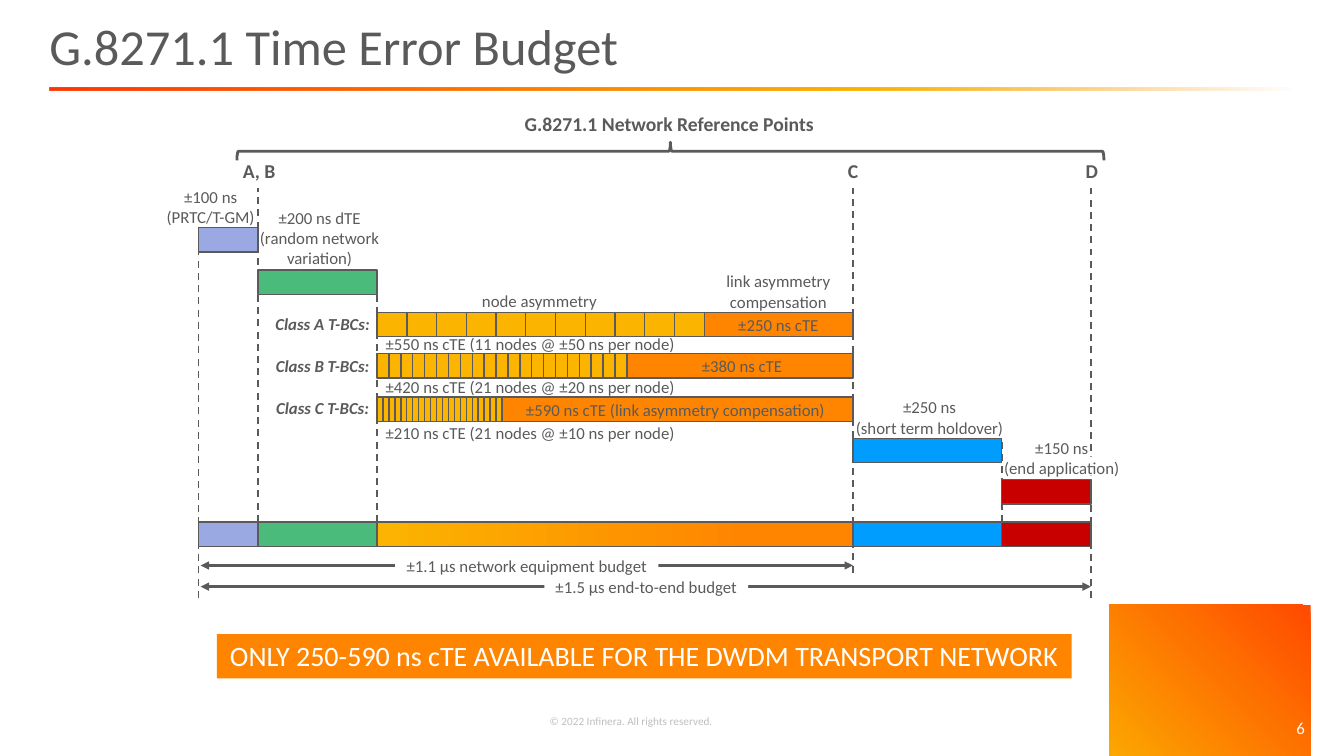
import pptx
import pptx.dml.color
import pptx.enum.dml
import pptx.enum.shapes
import pptx.enum.text
import pptx.oxml
import pptx.oxml.ns
import pptx.util

Inches = pptx.util.Inches
RGBColor = pptx.dml.color.RGBColor
SHAPE = pptx.enum.shapes.MSO_SHAPE
GREY, WHITE, PALE = RGBColor(0x5A, 0x5A, 0x5A), RGBColor(255, 255, 255), RGBColor(0xBF, 0xBF, 0xBF)
AMBER, ORANGE = RGBColor(0xFB, 0xB4, 0x00), RGBColor(0xFF, 0x85, 0x00)
FLAME, SCARLET = RGBColor(0xFF, 0x4A, 0x00), RGBColor(0xFF, 0x35, 0x01)
TANGERINE = RGBColor(0xFB, 0x94, 0x14)
LILAC, GREEN = RGBColor(0x9B, 0xA9, 0xE3), RGBColor(0x4B, 0xBB, 0x7C)
BLUE, RED = RGBColor(0x00, 0x9D, 0xFF), RGBColor(0xC9, 0x00, 0x00)

LEFT, PER_NS, BAR_H = 1.97, 0.0059, 0.24
NETWORK_START, NETWORK_NS = 300, 800
BUDGET = [(0, 100, LILAC, 2.26), (100, 200, GREEN, 2.68),
          (1100, 250, BLUE, 4.35), (1350, 150, RED, 4.76)]
CLASSES = [("A", 11, 50, 3.1), ("B", 21, 20, 3.51), ("C", 21, 10, 3.94)]
NETWORK_FILL = [(0, AMBER, 100), (78, ORANGE, 100), (100, ORANGE, 100)]
RULE_FILL = [(0, SCARLET, 100), (66, AMBER, 100), (100, TANGERINE, 0)]
CORNER_FILL = [(0, FLAME, 100), (100, AMBER, 100)]
GUIDES = [(1500, 5.93, 1.87), (100, 5.42, 1.87), (0, 5.93, 2.26),
          (300, 5.42, 2.68), (1350, 5.42, 4.37), (1100, 5.68, 1.87)]
BOLD = {"size": 14, "bold": True}
CLASS_STYLE = {"bold": True, "italic": True}
LABELS = [
    ("A, B", 2.57, 1.53, BOLD), ("C", 8.46, 1.53, BOLD), ("D", 10.83, 1.53, BOLD),
    ("G.8271.1 Network Reference Points", 6.64, 1.06, BOLD),
    ("±100 ns\n(PRTC/T-GM)", 2.09, 1.8, {}),
    ("±200 ns dTE\n(random network\nvariation)", 3.17, 2.01, {}),
    ("node asymmetry", 5.35, 2.84, {}),
    ("link asymmetry\ncompensation", 7.72, 2.64, {}),
    ("Class A T-BCs:", 3.2, 3.06, CLASS_STYLE),
    ("Class B T-BCs:", 3.2, 3.48, CLASS_STYLE),
    ("Class C T-BCs:", 3.2, 3.9, CLASS_STYLE),
    ("±550 ns cTE (11 nodes @ ±50 ns per node)", 5.26, 3.26, {}),
    ("±420 ns cTE (21 nodes @ ±20 ns per node)", 5.26, 3.69, {}),
    ("±210 ns cTE (21 nodes @ ±10 ns per node)", 5.26, 4.14, {}),
    ("±250 ns cTE", 7.72, 3.07, {}),
    ("±380 ns cTE", 7.36, 3.48, {}),
    ("±590 ns cTE (link asymmetry compensation)", 6.7, 3.92, {}),
    ("±250 ns\n(short term holdover)", 9.22, 3.89, {}),
    ("±150 ns\n(end application)", 10.53, 4.29, {}),
    ("6", 12.9, 7.07, {"color": WHITE}),
]


def x_at(ns):
    """Return the horizontal position of a time error in inches."""
    return LEFT + ns * PER_NS


class Deck:
    """Holds the style and the current slide and draws each kind of element."""

    font = {"name": "Calibri", "size": 12, "color": GREY}

    def __init__(self, prs):
        """Add a title-only slide."""
        self.s = prs.slides.add_slide(prs.slide_layouts[5])

    def set_text(self, sp, text, align="CENTER", anchor="TOP", wrap=False, **style):
        """Put formatted text in a shape."""
        tf = sp.text_frame
        frame = {"text": text, "word_wrap": wrap,
                 "auto_size": pptx.enum.text.MSO_AUTO_SIZE.NONE,
                 "vertical_anchor": getattr(pptx.enum.text.MSO_ANCHOR, anchor),
                 "margin_left": Inches(0.1), "margin_right": Inches(0.1),
                 "margin_top": Inches(0.05), "margin_bottom": Inches(0.05)}
        for key, value in frame.items():
            setattr(tf, key, value)
        values = {**self.font, **style}
        color = values.pop("color")
        values["size"] = pptx.util.Pt(values["size"])
        for p in tf.paragraphs:
            p.alignment = getattr(pptx.enum.text.PP_ALIGN, align)
            for r in p.runs:
                for key, value in values.items():
                    setattr(r.font, key, value)
                r.font.color.rgb = color

    def title(self, text):
        """Move and format the title placeholder."""
        sp = self.s.shapes.title
        sp.left, sp.top, sp.width, sp.height = map(Inches, (0.49, 0.01, 12.22, 0.89))
        self.set_text(sp, text, "LEFT", "MIDDLE", True, size=36)
        sp.text_frame.margin_left = 0

    def label(self, text, center, top, style):
        """Add a text box centred on a horizontal position."""
        size = style.get("size", self.font["size"])
        rows = text.split("\n")
        height = 0.1 + len(rows) * size * 1.22 / 72
        width = 0.2 + max(map(len, rows)) * size * 0.0061
        sp = self.s.shapes.add_textbox(*map(Inches, (center - width / 2, top, width, height)))
        self.set_text(sp, text, **style)

    def paint(self, sp, fill, line=None, angle=0):
        """Set a solid or gradient fill and the outline."""
        sp.shadow.inherit = False
        if fill is None:
            sp.fill.background()
        elif isinstance(fill, list):
            sp.fill.gradient()
            sp.fill.gradient_angle = angle
            stops = sp._element.spPr.find(".//" + pptx.oxml.ns.qn("a:gsLst"))
            for stop in list(stops):
                stops.remove(stop)
            for pos, color, alpha in fill:
                stops.append(pptx.oxml.parse_xml(
                    f'<a:gs {pptx.oxml.ns.nsdecls("a")} pos="{pos * 1000}"><a:srgbClr val="{color}">'
                    f'<a:alpha val="{alpha * 1000}"/></a:srgbClr></a:gs>'))
        else:
            sp.fill.solid()
            sp.fill.fore_color.rgb = fill
        if line:
            sp.line.color.rgb = GREY
            sp.line.width = pptx.util.Pt(line)
        else:
            sp.line.fill.background()

    def box(self, at, fill, line=None, kind=SHAPE.RECTANGLE):
        """Add a preset shape."""
        sp = self.s.shapes.add_shape(kind, *map(Inches, at))
        self.paint(sp, fill, line)
        return sp

    def bar(self, start, length, top, fill):
        """Add a budget bar measured in nanoseconds."""
        self.box((x_at(start), top, length * PER_NS, BAR_H), fill, 1)

    def line(self, start, end, width, dashed=False, arrows=False):
        """Add a straight line, dashed or with an arrowhead at each end."""
        sp = self.s.shapes.add_connector(
            pptx.enum.shapes.MSO_CONNECTOR.STRAIGHT, *map(Inches, start + end))
        sp.line.color.rgb = GREY
        sp.line.width = pptx.util.Pt(width)
        if dashed:
            sp.line.dash_style = pptx.enum.dml.MSO_LINE.DASH
        ns = pptx.oxml.ns.nsdecls("a")
        if arrows:
            for end_name in ("headEnd", "tailEnd"):
                sp.line._get_or_add_ln().append(
                    pptx.oxml.parse_xml(f'<a:{end_name} {ns} type="triangle"/>'))
        sp._element.spPr.append(pptx.oxml.parse_xml(f"<a:effectLst {ns}/>"))

    def corner(self):
        """Add the curved corner at the bottom right."""
        curve = [(13.33, 6.32), (12.92, 6.98), (12.37, 7.39), (10.88, 7.5)]
        points = []
        for t in (i / 40 for i in range(41)):
            weights = ((1 - t) ** 3, 3 * t * (1 - t) ** 2, 3 * t * t * (1 - t), t ** 3)
            points.append(tuple(sum(w * c[k] for w, c in zip(weights, curve)) for k in (0, 1)))
        fb = self.s.shapes.build_freeform(13.33, 7.5, scale=Inches(1))
        fb.add_line_segments(points)
        self.paint(fb.convert_to_shape(), CORNER_FILL, angle=225)


def main():
    """Build the slide and save it."""
    prs = pptx.Presentation()
    prs.slide_width, prs.slide_height = Inches(13.33), Inches(7.5)
    deck = Deck(prs)
    deck.title("G.8271.1 Time Error Budget")
    deck.corner()
    deck.box((0.49, 0.87, 12.35, 0.03), RULE_FILL)
    for index, (ns, bottom, top) in enumerate(GUIDES):
        deck.line((x_at(ns), bottom), (x_at(ns), top), 1.25, dashed=True)
        if index == 0:
            deck.box((10.25, 4.53, 1, 0.19), WHITE)
    for start, length, fill, top in BUDGET:
        deck.bar(start, length, top, fill)
        deck.bar(start, length, 5.18, fill)
    deck.bar(NETWORK_START, NETWORK_NS, 5.18, NETWORK_FILL)
    for name, nodes, step, top in CLASSES:
        for node in range(nodes):
            deck.bar(NETWORK_START + node * step, step, top, AMBER)
        used = nodes * step
        deck.bar(NETWORK_START + used, NETWORK_NS - used, top, ORANGE)
    brace = deck.box((6.56, -2.8, 0.18, 8.6), None, 2, SHAPE.RIGHT_BRACE)
    brace.rotation = 270
    for text, center, top, style in LABELS:
        deck.label(text, center, top, style)
    for end, y in ((1100, 5.61), (1500, 5.82)):
        deck.line((1.99, y), (x_at(end), y), 2, arrows=True)
    for at, fill, text, style in (
            ((5.4, 5.67, 2.02, 0.3), WHITE, "±1.5 µs end-to-end budget", {}),
            ((3.92, 5.46, 2.61, 0.3), WHITE, "±1.1 µs network equipment budget", {}),
            ((2.15, 6.29, 8.48, 0.44), ORANGE,
             "ONLY 250-590 ns cTE AVAILABLE FOR THE DWDM TRANSPORT NETWORK",
             {"size": 20, "color": WHITE}),
            ((4.69, 7.06, 3.14, 0.18), None, "© 2022 Infinera. All rights reserved.",
             {"size": 8, "color": PALE, "anchor": "MIDDLE"})):
        deck.set_text(deck.box(at, fill), text, **style)
    prs.save("out.pptx")


if __name__ == "__main__":
    main()
